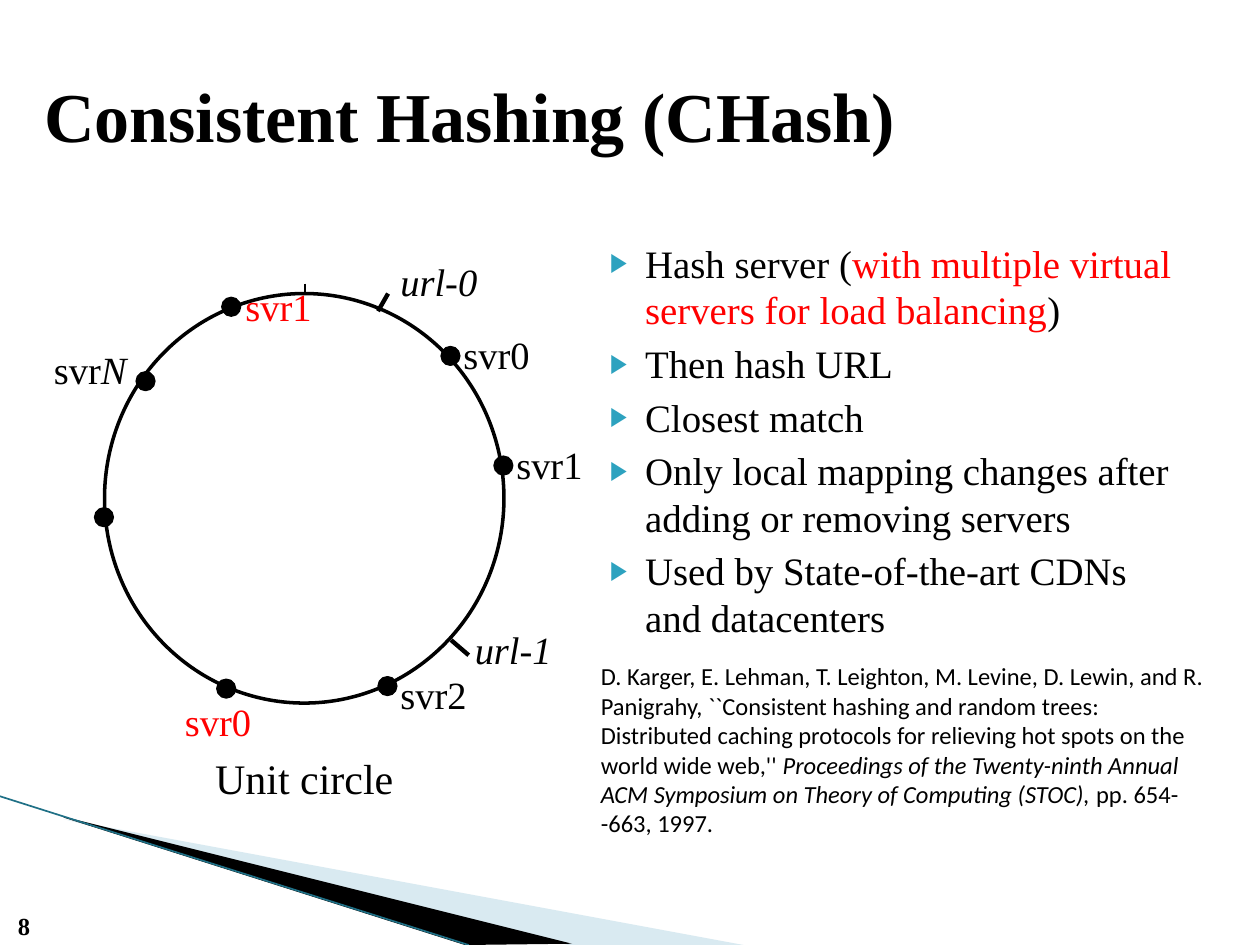
from lxml import etree
from pptx import Presentation, util as u
from pptx.dml.color import RGBColor
from pptx.enum import shapes, text
from pptx.oxml.ns import qn

SERIF, SANS = "Times New Roman", "Calibri"
BLACK, RED, TEAL = "000000", "FF0000", "2DA2BF"

TITLE = "Consistent Hashing (CHash)"
# Paragraphs are lists of (text, run format)
BULLETS = [
    [("Hash server (", {}),
     ("with multiple virtual servers for load balancing", {"color": RED}),
     (")", {})],
    [("Then hash URL", {})],
    [("Closest match", {})],
    [("Only local mapping changes after adding or removing servers", {})],
    [("Used by State-of-the-art CDNs and datacenters", {})],
]
CITATION = [
    [("D. Karger, E. Lehman, T. Leighton, M. Levine, D. Lewin, and R. Panigrahy, "
      "``Consistent hashing and random trees: Distributed caching protocols for "
      "relieving hot spots on the", {})],
    [("world wide web,'' ", {}),
     ("Proceedings of the Twenty-ninth Annual ACM Symposium on Theory of "
      "Computing (STOC), ", {"italic": True}),
     ("pp. 654--663, 1997.", {})],
]
SERVER_DOTS = [(3.5, 2.75), (3.92, 3.62), (3, 5.37), (0.75, 4.03),
               (1.08, 2.95), (1.72, 5.39), (1.76, 2.36)]
LABELS = [  # left, top, runs
    (3.58, 2.58, [("svr0", {})]),
    (4, 3.45, [("svr1", {})]),
    (3.08, 5.28, [("svr2", {})]),
    (0.33, 2.7, [("svr", {}), ("N", {"italic": True})]),
    (1.37, 5.49, [("svr0", {"color": RED})]),
    (1.85, 2.2, [("svr1", {"color": RED})]),
    (3.08, 2, [("url-0", {"italic": True})]),
    (3.67, 4.92, [("url-1", {"italic": True})]),
]
TICKS = [  # start, end, width
    ((2.42, 2.25), (2.42, 2.33), 0.75),
    ((3.08, 2.33), (3, 2.47), 2.5),
    ((3.58, 5.08), (3.72, 5.2), 2.5),
]
WEDGES = [  # points, colour, opacity in percent
    ([(0.5, 6.5), (5.9, 7.5), (4.51, 7.5)], "A0CBDC", 40),
    ([(0.5, 6.48), (4.54, 7.49), (3.69, 7.5), (0.51, 6.49)], BLACK, 100),
]


def rgb(color):
    return RGBColor.from_string(color)


def place(sp, left, top, width, height):
    sp.left, sp.top = u.Inches(left), u.Inches(top)
    sp.width, sp.height = u.Inches(width), u.Inches(height)


def write(sp, paragraphs, size, font=SERIF, bold=False, align=text.PP_ALIGN.LEFT,
          anchor=text.MSO_ANCHOR.TOP):
    tf = sp.text_frame
    tf.word_wrap = True
    tf.auto_size = text.MSO_AUTO_SIZE.NONE
    tf.vertical_anchor = anchor
    for i, runs in enumerate(paragraphs):
        p = tf.add_paragraph() if i else tf.paragraphs[0]
        p.alignment = align
        for words, style in runs:
            r = p.add_run()
            r.text = words
            r.font.name, r.font.size = font, u.Pt(size)
            r.font.bold, r.font.italic = bold, style.get("italic", False)
            r.font.color.rgb = rgb(style.get("color", BLACK))
    return tf


def add_text(s, box, paragraphs, size, **style):
    sp = s.shapes.add_textbox(*map(u.Inches, box))
    write(sp, paragraphs, size, **style)


def add_bullet(p):
    pPr = p._p.get_or_add_pPr()
    pPr.set("marL", str(u.Inches(0.4)))
    pPr.set("indent", str(u.Inches(-0.28)))
    color = etree.SubElement(pPr, qn("a:buClr"))
    etree.SubElement(color, qn("a:srgbClr"), val=TEAL)
    etree.SubElement(pPr, qn("a:buSzPct"), val="68000")
    etree.SubElement(pPr, qn("a:buChar"), char="▶")


def add_line(s, start, end, color, width):
    line = s.shapes.add_connector(shapes.MSO_CONNECTOR.STRAIGHT,
                                  *map(u.Inches, start + end))
    line.line.color.rgb, line.line.width = rgb(color), u.Pt(width)
    etree.SubElement(line._element.spPr, qn("a:effectLst"))


def add_ellipse(s, box, width, fill=None):
    sp = s.shapes.add_shape(shapes.MSO_SHAPE.OVAL, *map(u.Inches, box))
    sp.shadow.inherit = False
    if fill:
        sp.fill.solid()
        sp.fill.fore_color.rgb = rgb(fill)
    else:
        sp.fill.background()
    sp.line.color.rgb, sp.line.width = rgb(BLACK), u.Pt(width)


def add_wedge(s, points, color, opacity):
    corners = [(u.Inches(x), u.Inches(y)) for x, y in points]
    builder = s.shapes.build_freeform(*corners[0])
    builder.add_line_segments(corners[1:], close=True)
    sp = builder.convert_to_shape()
    sp.shadow.inherit = False
    sp.fill.solid()
    sp.fill.fore_color.rgb = rgb(color)
    sp.line.fill.background()
    if opacity < 100:
        srgb = sp._element.spPr.find(".//" + qn("a:srgbClr"))
        etree.SubElement(srgb, qn("a:alpha"), val=str(opacity * 1000))


def main():
    prs = Presentation()
    prs.slide_width, prs.slide_height = u.Inches(10), u.Inches(7.5)
    s = prs.slides.add_slide(prs.slide_layouts[1])

    for wedge in WEDGES:
        add_wedge(s, *wedge)
    add_line(s, (0, 6.32), (3.72, 7.5), "1F7086", 0.95)
    add_text(s, (-0.01, 7.11, 0.4, 0.4), [[("8", {})]], 14, bold=True,
             align=text.PP_ALIGN.CENTER, anchor=text.MSO_ANCHOR.BOTTOM)

    title, body = s.placeholders
    place(title, 0.25, 0.28, 9.73, 1.25)
    write(title, [[(TITLE, {})]], 40, bold=True, anchor=text.MSO_ANCHOR.MIDDLE)
    place(body, 4.62, 1.85, 4.83, 3.3)
    tf = write(body, BULLETS, 22.2)
    for i, p in enumerate(tf.paragraphs):
        add_bullet(p)
        p.space_before = u.Pt(4 if i else 0)

    add_ellipse(s, (0.83, 2.33, 3.17, 3.25), 2)
    add_text(s, (1.25, 5.92, 2.33, 0.5), [[("Unit circle", {})]], 24,
             align=text.PP_ALIGN.CENTER)
    for start, end, width in TICKS:
        add_line(s, start, end, BLACK, width)
    for left, top in SERVER_DOTS:
        add_ellipse(s, (left, top, 0.15, 0.15), 0.75, fill=BLACK)
    for left, top, runs in LABELS:
        add_text(s, (left, top, 1, 0.47), [runs], 22)
    add_text(s, (4.67, 5.2, 5.01, 1.51), CITATION, 14, font=SANS)

    prs.save("out.pptx")


if __name__ == "__main__":
    main()
